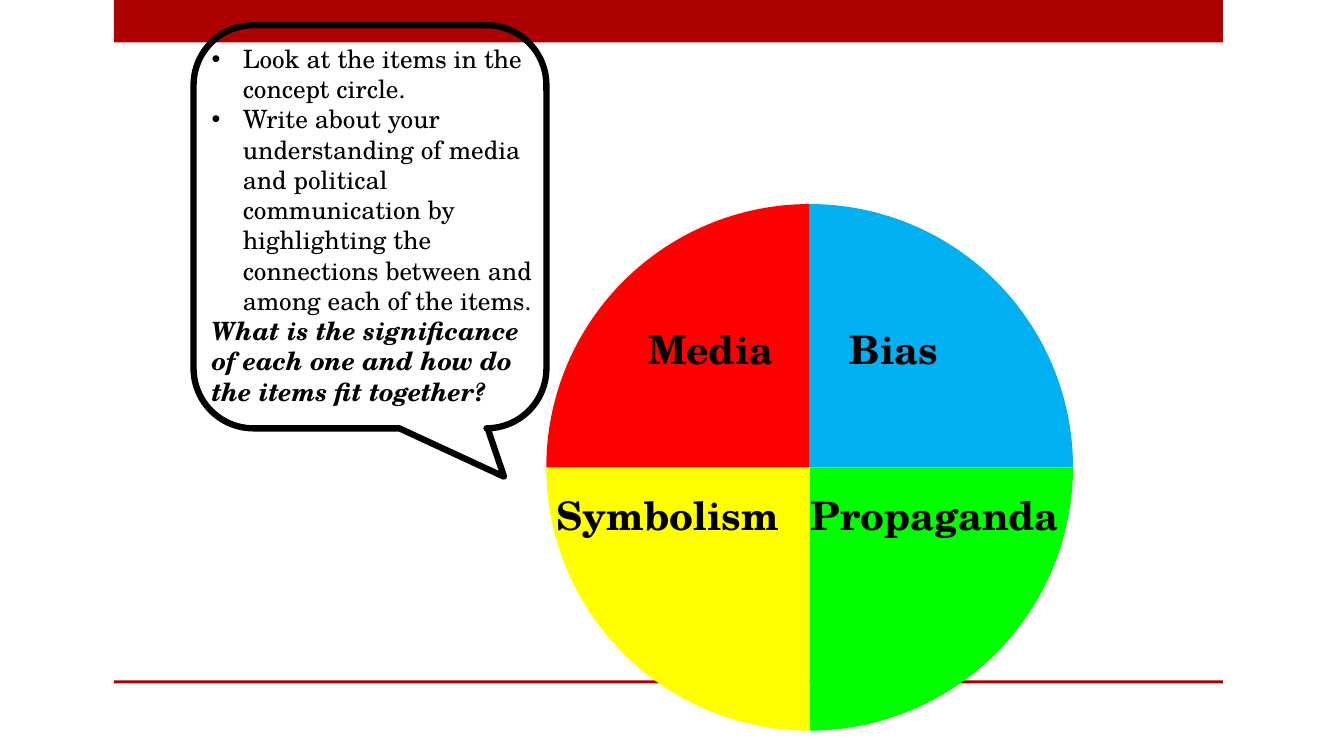
from dataclasses import dataclass

from lxml.etree import SubElement
from pptx import Presentation
from pptx.chart.data import CategoryChartData
from pptx.dml.color import RGBColor
from pptx.enum.chart import XL_CHART_TYPE
from pptx.enum.shapes import MSO_SHAPE
from pptx.enum.text import MSO_AUTO_SIZE
from pptx.oxml.ns import qn
from pptx.slide import Slide
from pptx.text.text import Font, _Paragraph
from pptx.util import Emu, Pt

EMU_PER_PX = 9144


def px(length: int) -> Emu:
    return Emu(length * EMU_PER_PX)


@dataclass(frozen=True)
class Theme:
    ink: RGBColor = RGBColor(0, 0, 0)
    band: RGBColor = RGBColor.from_string("AD0101")
    outline: RGBColor = RGBColor.from_string("00B0F0")
    font: str = "TeX Gyre Schola"
    bullet_font: str = "Arial"
    body: Pt = Pt(18)
    label: Pt = Pt(28)
    circle_line: Pt = Pt(0.75)
    callout_line: Pt = Pt(4.5)


@dataclass(frozen=True)
class Box:
    left: int
    top: int
    width: int
    height: int

    def emu(self) -> tuple[Emu, Emu, Emu, Emu]:
        return px(self.left), px(self.top), px(self.width), px(self.height)


@dataclass(frozen=True)
class Concept:
    name: str
    color: str
    box: Box


@dataclass(frozen=True)
class Prompt:
    text: str
    bulleted: bool


THEME = Theme()
UPPER, LOWER, LABEL_HEIGHT = 318, 483, 57
BULLET_INDENT = 31

BANDS = (Box(113, 0, 1100, 42), Box(113, 675, 1100, 3))
CIRCLE = Box(441, 186, 717, 550)
PLOT = {"x": 0.14, "y": 0.03, "w": 0.73, "h": 0.95}
CALLOUT = Box(192, 25, 350, 400)
CALLOUT_SHAPE = (0.38, 0.62, 0.17)
PROMPT_BOX = Box(200, 38, 350, 374)

CONCEPTS = (
    Concept("Bias", "00B0F0", Box(833, UPPER, 150, LABEL_HEIGHT)),
    Concept("Propaganda", "00FF00", Box(794, LOWER, 272, LABEL_HEIGHT)),
    Concept("Symbolism", "FFFF00", Box(542, LOWER, 250, LABEL_HEIGHT)),
    Concept("Media", "FF0000", Box(633, UPPER, 150, LABEL_HEIGHT)),
)
PROMPTS = (
    Prompt("Look at the items in the concept circle.", True),
    Prompt(
        "Write about your understanding of media and political communication "
        "by highlighting the connections between and among each of the items.",
        True,
    ),
    Prompt(
        "What is the significance of each one and how do the items fit together?",
        False,
    ),
)


def style(font: Font, size: Pt, bold: bool = False, italic: bool = False) -> None:
    font.name = THEME.font
    font.size = size
    font.bold = bold
    font.italic = italic
    font.color.rgb = THEME.ink


def add_bullet(paragraph: _Paragraph) -> None:
    properties = paragraph._p.get_or_add_pPr()
    properties.set("marL", str(px(BULLET_INDENT)))
    properties.set("indent", str(px(-BULLET_INDENT)))
    SubElement(properties, qn("a:buFont"), typeface=THEME.bullet_font)
    SubElement(properties, qn("a:buChar"), char="•")


def draw_band(slide: Slide, box: Box) -> None:
    band = slide.shapes.add_shape(MSO_SHAPE.RECTANGLE, *box.emu())
    band.shadow.inherit = False
    band.fill.solid()
    band.fill.fore_color.rgb = THEME.band
    band.line.fill.background()


def draw_circle(slide: Slide) -> None:
    data = CategoryChartData()
    data.categories = [str(number) for number in range(1, len(CONCEPTS) + 1)]
    data.add_series("Series 1", [100 // len(CONCEPTS)] * len(CONCEPTS))
    chart = slide.shapes.add_chart(XL_CHART_TYPE.PIE, *CIRCLE.emu(), data).chart
    chart.has_legend = False
    chart.has_title = False
    style(chart.font, THEME.body)

    plot = chart.plots[0]
    plot.vary_by_categories = True
    quarters = plot.series[0]
    quarters.format.line.color.rgb = THEME.outline
    quarters.format.line.width = THEME.circle_line
    for index, concept in enumerate(CONCEPTS):
        fill = quarters.points[index].format.fill
        fill.solid()
        fill.fore_color.rgb = RGBColor.from_string(concept.color)

    plot_area = chart._chartSpace.chart.plotArea
    for layout in plot_area.findall(qn("c:layout")):
        plot_area.remove(layout)
    layout = SubElement(plot_area, qn("c:layout"))
    plot_area.insert(0, layout)
    manual = SubElement(layout, qn("c:manualLayout"))
    settings = {"layoutTarget": "inner", "xMode": "edge", "yMode": "edge", **PLOT}
    for tag, value in settings.items():
        SubElement(manual, qn(f"c:{tag}"), val=str(value))


def draw_label(slide: Slide, concept: Concept) -> None:
    frame = slide.shapes.add_textbox(*concept.box.emu()).text_frame
    frame.word_wrap = True
    frame.auto_size = MSO_AUTO_SIZE.SHAPE_TO_FIT_TEXT
    frame.text = concept.name
    style(frame.paragraphs[0].font, THEME.label, bold=True)


def draw_callout(slide: Slide) -> None:
    callout = slide.shapes.add_shape(
        MSO_SHAPE.ROUNDED_RECTANGULAR_CALLOUT, *CALLOUT.emu()
    )
    for index, value in enumerate(CALLOUT_SHAPE):
        callout.adjustments[index] = value
    callout.shadow.inherit = False
    callout.fill.background()
    callout.line.color.rgb = THEME.ink
    callout.line.width = THEME.callout_line


def draw_prompts(slide: Slide) -> None:
    frame = slide.shapes.add_textbox(*PROMPT_BOX.emu()).text_frame
    frame.word_wrap = True
    frame.auto_size = MSO_AUTO_SIZE.SHAPE_TO_FIT_TEXT
    for index, prompt in enumerate(PROMPTS):
        paragraph = frame.add_paragraph() if index else frame.paragraphs[0]
        paragraph.text = prompt.text
        if prompt.bulleted:
            add_bullet(paragraph)
        emphasis = not prompt.bulleted
        style(paragraph.font, THEME.body, bold=emphasis, italic=emphasis)


def main() -> None:
    presentation = Presentation()
    presentation.slide_width = px(1333)
    presentation.slide_height = px(750)
    slide = presentation.slides.add_slide(presentation.slide_layouts[6])
    for band in BANDS:
        draw_band(slide, band)
    draw_circle(slide)
    for concept in CONCEPTS:
        draw_label(slide, concept)
    draw_callout(slide)
    draw_prompts(slide)
    presentation.save("out.pptx")


if __name__ == "__main__":
    main()
